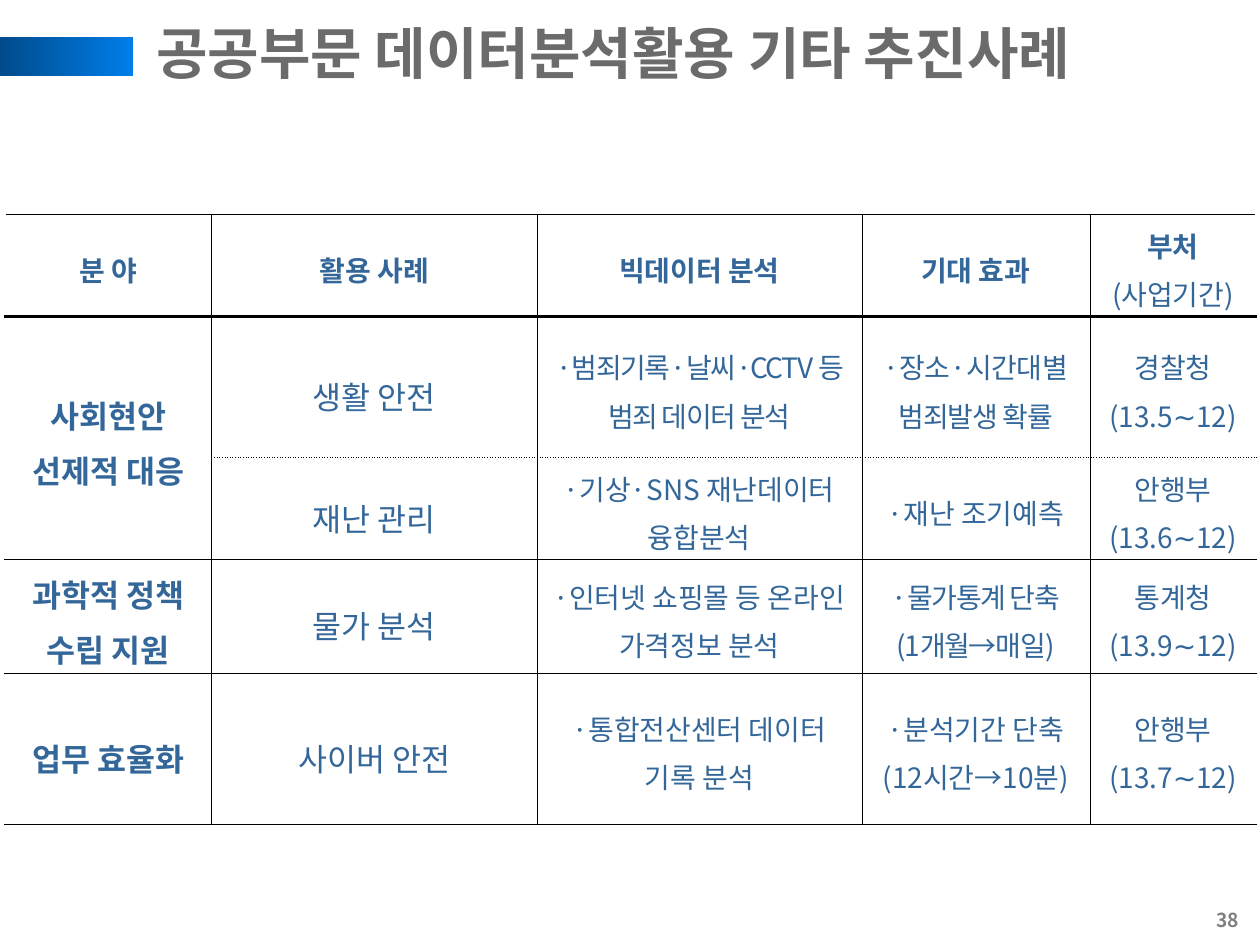
from lxml import etree
from pptx import Presentation
from pptx.dml.color import RGBColor
from pptx.enum.shapes import MSO_SHAPE
from pptx.enum.text import MSO_ANCHOR, PP_ALIGN
from pptx.oxml.ns import qn
from pptx.util import Inches, Pt

RECT = MSO_SHAPE.RECTANGLE
MIDDLE = MSO_ANCHOR.MIDDLE
LEFT, CENTER, RIGHT = PP_ALIGN.LEFT, PP_ALIGN.CENTER, PP_ALIGN.RIGHT
FONT = "Noto Sans CJK KR"
COLORS = {"title": "6B6B6B", "page": "808080", "body": "336699",
          "line": "000000", "dark": "004B8B", "light": "007EEB"}
THIN, THICK, DOT = (0.28, "solid"), (1.98, "solid"), (0.28, "sysDot")
RULES = [THIN, THICK, DOT, THIN, THIN, THIN]
COLS = [1.64, 2.58, 2.58, 1.81, 1.32]
ROWS = [0.81, 1.12, 0.81, 0.9, 1.2]
CELLS = [
    [["분 야"], ["활용 사례"], ["빅데이터 분석"], ["기대 효과"], ["부처", "(사업기간)"]],
    [["사회현안", "선제적 대응"], ["생활 안전"],
     [[("·", -0.7), ("범죄기록·날씨·CCTV 등 ", -0.8), ("범죄 데이터 분석", -0.7)]],
     [[("·장소·시간대별 ", -0.2), ("범죄발생 확률", -0.5)]],
     ["경찰청", "(13.5∼12)"]],
    [[], ["재난 관리"], ["·기상·SNS 재난데이터 융합분석"], ["·재난 조기예측"],
     ["안행부", "(13.6∼12)"]],
    [["과학적 정책", "수립 지원"], ["물가 분석"],
     ["·인터넷 쇼핑몰 등 온라인 가격정보 분석"],
     [[("·", 0), ("물가통계 단축\n(1개월→매일)", -0.7)]],
     ["통계청", "(13.9∼12)"]],
    [["업무 효율화"], ["사이버 안전"], ["·통합전산센터 데이터\n기록 분석"],
     ["·분석기간 단축\n(12시간→10분)"], ["안행부", "(13.7∼12)"]],
]


class Deck:
    """Holds the text style and the current slide."""

    def __init__(self, slide):
        self.slide = slide

    def rgb(self, name):
        return RGBColor.from_string(COLORS[name])

    def style(self, para, size, color, align, bold=False):
        para.alignment = align
        font = para.font
        font.size, font.bold, font.name = Pt(size), bold, FONT
        font.color.rgb = self.rgb(color)
        props = para._p.pPr.find(qn("a:defRPr"))
        props.set("kern", "0")
        etree.SubElement(props, qn("a:ea"), typeface=FONT)

    def bar(self, x, y, w, h):
        shape = self.slide.shapes.add_shape(
            RECT, Inches(x), Inches(y), Inches(w), Inches(h))
        shape.shadow.inherit = False
        shape.line.fill.background()
        shape.fill.gradient()
        shape.fill.gradient_angle = 0
        for stop, name in zip(shape.fill.gradient_stops, ("dark", "light")):
            stop.color.rgb = self.rgb(name)

    def text(self, x, y, w, h, words, size, color, align, space=0):
        box = self.slide.shapes.add_textbox(
            Inches(x), Inches(y), Inches(w), Inches(h))
        frame = box.text_frame
        frame.word_wrap = True
        frame.vertical_anchor = MIDDLE
        para = frame.paragraphs[0]
        self.runs(para, [(words, space)])
        self.style(para, size, color, align, True)

    def runs(self, para, parts):
        for words, space in parts:
            for i, line in enumerate(words.split("\n")):
                if i:
                    para.add_line_break()
                run = para.add_run()
                run.text = line
                if space:
                    run._r.get_or_add_rPr().set("spc", str(round(space * 100)))

    def edge(self, cell, side, rule):
        width, dash = rule
        line = etree.SubElement(cell._tc.get_or_add_tcPr(), qn("a:ln" + side),
                                w=str(Pt(width)))
        fill = etree.SubElement(line, qn("a:solidFill"))
        etree.SubElement(fill, qn("a:srgbClr"), val=COLORS["line"])
        etree.SubElement(line, qn("a:prstDash"), val=dash)

    def cell(self, cell, row, col, paras):
        cell.margin_left = cell.margin_right = Inches(0.07)
        cell.margin_top = cell.margin_bottom = Inches(0.02)
        cell.vertical_anchor = MIDDLE
        if col > 0:
            self.edge(cell, "L", THIN)
        if col < len(COLS) - 1:
            self.edge(cell, "R", THIN)
        tall = cell.is_merge_origin or cell.is_spanned
        for side, rule in (("T", RULES[row]), ("B", RULES[row + 1])):
            self.edge(cell, side, THIN if tall and rule == DOT else rule)
        cell.fill.background()
        frame = cell.text_frame
        for i, words in enumerate(paras):
            para = frame.add_paragraph() if i else frame.paragraphs[0]
            parts = [(words, 0)] if isinstance(words, str) else words
            self.runs(para, parts)
            start = parts[0][0][0]
            para.line_spacing = 1.4 if row and (col == 1 or row == 4 and col == 0) else 1.2
            if start == "·":
                para._p.get_or_add_pPr().set("indent", str(Inches(-0.06)))
            bold = (row == 0 or col == 0) and start != "("
            self.style(para, 18 if row and col < 2 else 16, "body", CENTER, bold)

    def table(self, x, y):
        table = self.slide.shapes.add_table(
            len(ROWS), len(COLS), Inches(x), Inches(y),
            Inches(sum(COLS)), Inches(sum(ROWS))).table
        table.first_row = table.horz_banding = False
        for part, width in zip(table.columns, COLS):
            part.width = Inches(width)
        for part, height in zip(table.rows, ROWS):
            part.height = Inches(height)
        table.cell(1, 0).merge(table.cell(2, 0))
        for r, line in enumerate(CELLS):
            for c, paras in enumerate(line):
                self.cell(table.cell(r, c), r, c, paras)


def main():
    show = Presentation()
    show.slide_width, show.slide_height = Inches(10), Inches(7.5)
    deck = Deck(show.slides.add_slide(show.slide_layouts[6]))
    deck.bar(0, 0.29, 1.06, 0.31)
    deck.text(7.6, 7.1, 2.33, 0.4, "38", 11, "page", RIGHT, -0.5)
    deck.text(1.14, 0.07, 8.66, 0.69, "공공부문 데이터분석활용 기타 추진사례",
              32, "title", LEFT)
    deck.table(0.04, 1.7)
    show.save("out.pptx")


if __name__ == "__main__":
    main()
